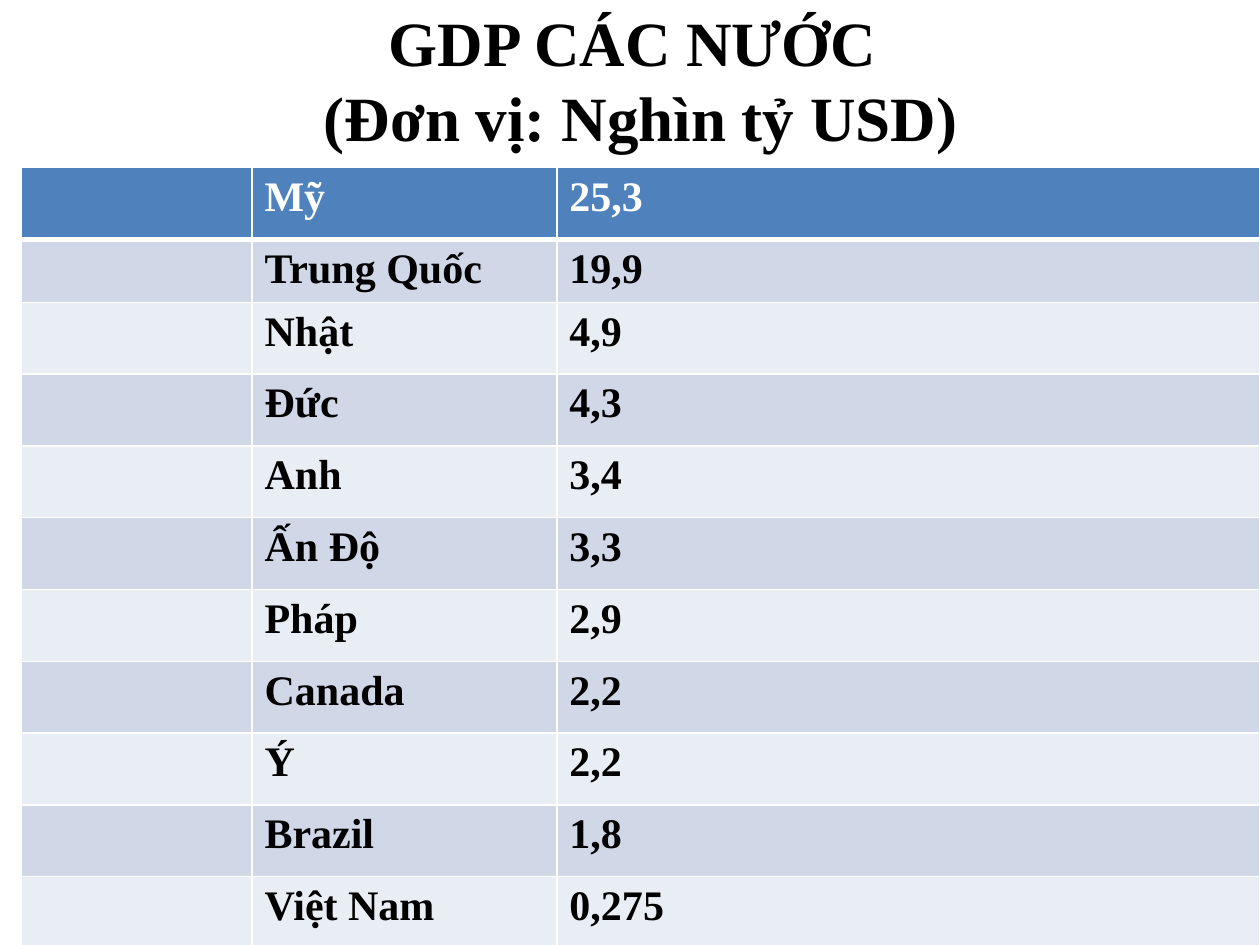
from lxml import etree
from pptx import Presentation
from pptx.dml.color import RGBColor
from pptx.enum import text
from pptx.oxml import ns
from pptx.util import Inches, Pt

FONT = "Times New Roman"
WHITE, BLACK = "FFFFFF", "000000"
HEADER_FILL = "4F81BD"
BAND_FILLS = ("D0D8E8", "E9EDF4")

TITLE = "GDP CÁC NƯỚC \v(Đơn vị: Nghìn tỷ USD)"
GDP_BY_COUNTRY = [
    ("Mỹ", "25,3"),
    ("Trung Quốc", "19,9"),
    ("Nhật", "4,9"),
    ("Đức", "4,3"),
    ("Anh", "3,4"),
    ("Ấn Độ", "3,3"),
    ("Pháp", "2,9"),
    ("Canada", "2,2"),
    ("Ý", "2,2"),
    ("Brazil", "1,8"),
    ("Việt Nam", "0,275"),
]
COLUMN_WIDTHS = (1.83, 2.42, 5.58)
ROW_HEIGHT, SHORT_ROW_HEIGHT = 0.57, 0.39


def color(hex_value):
    return RGBColor.from_string(hex_value)


def write_text(frame, content, size=24, fill=BLACK, bold=True,
               align=text.PP_ALIGN.LEFT):
    paragraph = frame.paragraphs[0]
    paragraph.text = content
    paragraph.alignment = align
    for run in paragraph.runs:
        run.font.name = FONT
        run.font.size = Pt(size)
        run.font.bold = bold
        run.font.color.rgb = color(fill)


def set_borders(cell, bottom=1):
    """Draw white borders; they must come before the fill in the cell."""
    properties = cell._tc.get_or_add_tcPr()
    widths = {"lnL": 1, "lnR": 1, "lnT": 1, "lnB": bottom}
    for position, (tag, width) in enumerate(widths.items()):
        line = etree.Element(ns.qn(f"a:{tag}"), w=str(Pt(width)))
        fill = etree.SubElement(line, ns.qn("a:solidFill"))
        etree.SubElement(fill, ns.qn("a:srgbClr"), val=WHITE)
        properties.insert(position, line)


def add_title(slide, left, top, width, height):
    box = slide.shapes.add_textbox(
        Inches(left), Inches(top), Inches(width), Inches(height))
    frame = box.text_frame
    frame.word_wrap = True
    frame.vertical_anchor = text.MSO_ANCHOR.MIDDLE
    write_text(frame, TITLE, size=36, align=text.PP_ALIGN.CENTER)


def add_gdp_table(slide, left, top, width, height):
    table = slide.shapes.add_table(
        len(GDP_BY_COUNTRY), len(COLUMN_WIDTHS),
        Inches(left), Inches(top), Inches(width), Inches(height)).table
    for column, column_width in zip(table.columns, COLUMN_WIDTHS):
        column.width = Inches(column_width)

    for index, (country, gdp) in enumerate(GDP_BY_COUNTRY):
        is_header = index == 0
        row = table.rows[index]
        row.height = Inches(SHORT_ROW_HEIGHT if index == 1 else ROW_HEIGHT)
        row_fill = HEADER_FILL if is_header else BAND_FILLS[(index - 1) % 2]
        # The first column stays empty
        for cell, content in zip(row.cells, ("", country, gdp)):
            cell.fill.solid()
            cell.fill.fore_color.rgb = color(row_fill)
            set_borders(cell, bottom=3 if is_header else 1)
            if content:
                write_text(cell.text_frame, content,
                           fill=WHITE if is_header else BLACK)


def main():
    presentation = Presentation()
    presentation.slide_width = Inches(10)
    presentation.slide_height = Inches(7.5)
    slide = presentation.slides.add_slide(presentation.slide_layouts[6])
    add_title(slide, 0.17, 0, 9.83, 1.25)
    add_gdp_table(slide, 0.17, 1.33, 9.83, 6.09)
    presentation.save("out.pptx")


if __name__ == "__main__":
    main()
